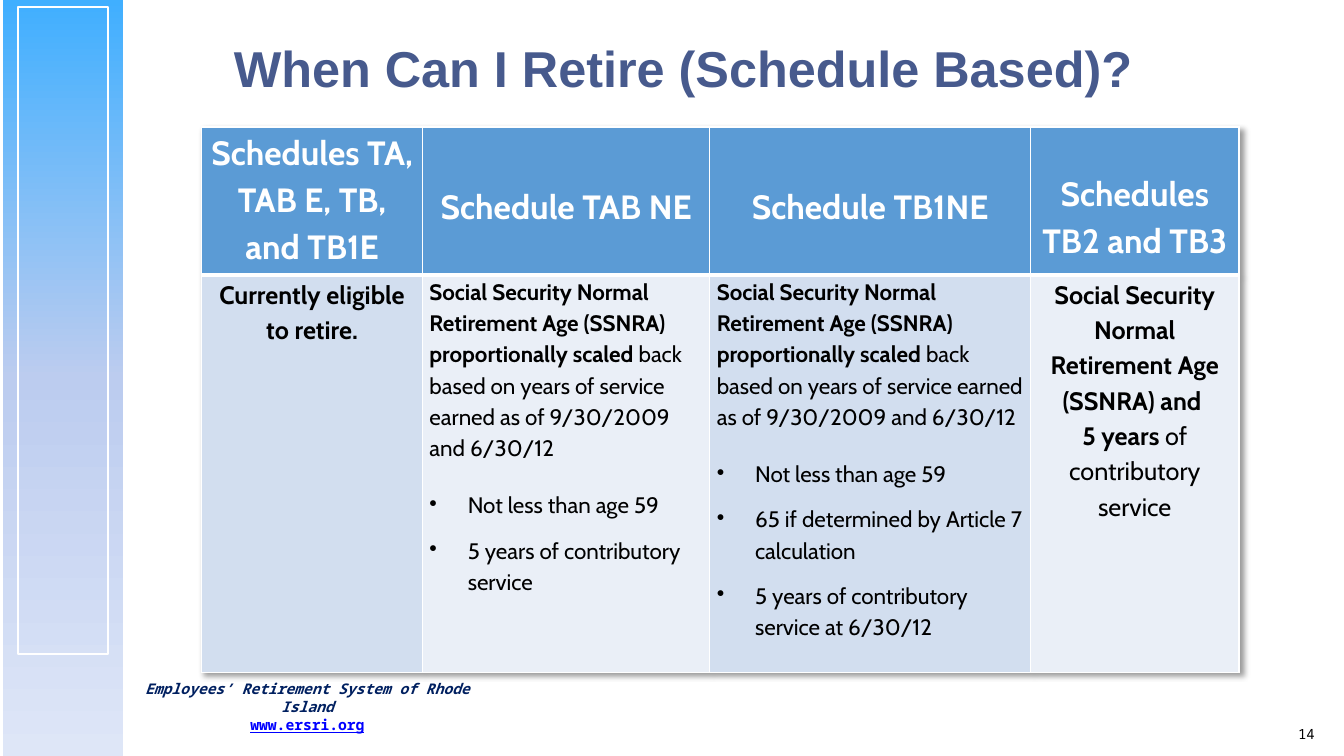
from dataclasses import dataclass, field

from pptx import Presentation
from pptx.dml.color import RGBColor as Rgb
from pptx.enum.shapes import MSO_SHAPE as Shape
from pptx.enum.text import MSO_ANCHOR as Anchor, PP_ALIGN as Align
from pptx.oxml import parse_xml as to_xml
from pptx.util import Emu, Pt

SCALE = 9144  # one px is a hundredth of an inch
NS = 'xmlns:a="http://schemas.openxmlformats.org/drawingml/2006/main"'
HUES = {
    "white": "FFFFFF", "black": "000000", "navy": "002060", "link": "0000FF",
    "title": "475A8D", "head": "5B9BD5", "dark": "D2DEEF", "pale": "EAEFF7",
    "sky": "40AFFF", "haze": "BCCCEF", "mist": "DEE6F7",
}


@dataclass
class Run:
    text: str
    hue: str = "black"
    style: dict = field(default_factory=dict)


@dataclass
class Para:
    runs: list[Run]
    align: Align = Align.LEFT
    lead: float = 1.0
    after: float = 0
    bullet: bool = False


@dataclass
class Box:
    place: tuple[int, int, int, int]
    paras: list[Para]
    anchor: Anchor = Anchor.TOP


@dataclass
class Cell:
    paras: list[Para]
    fill: str
    top: int = 0


def px(size: int) -> Emu:
    return Emu(size * SCALE)


def rgb(hue: str) -> Rgb:
    return Rgb.from_string(HUES[hue])


def write(frame, paras: list[Para]) -> None:
    for i, item in enumerate(paras):
        para = frame.paragraphs[0] if i == 0 else frame.add_paragraph()
        if item.bullet:
            props = para._p.get_or_add_pPr()
            props.set("marL", str(px(38)))
            props.set("indent", str(px(-38)))
            props.append(to_xml(f'<a:buChar {NS} char="•"/>'))
        para.alignment = item.align
        para.line_spacing = item.lead
        para.space_after = Pt(item.after)
        for part in item.runs:
            run = para.add_run()
            run.text = part.text
            run.font.color.rgb = rgb(part.hue)
            for name, value in part.style.items():
                setattr(run.font, name, value)


def draw_box(slide, box: Box) -> None:
    frame = slide.shapes.add_textbox(*map(px, box.place)).text_frame
    frame.word_wrap = True
    frame.vertical_anchor = box.anchor
    write(frame, box.paras)


def draw_bar(slide, place: tuple[int, int, int, int]):
    bar = slide.shapes.add_shape(Shape.RECTANGLE, *map(px, place))
    bar.shadow.inherit = False
    return bar


def draw_cell(cell, data: Cell, row: int) -> None:
    cell.margin_left = cell.margin_right = px(7)
    cell.margin_top, cell.margin_bottom = px(data.top), 0
    cell.fill.solid()
    cell.fill.fore_color.rgb = rgb(data.fill)
    write(cell.text_frame, data.paras)
    # The rule between the two rows is thick
    thick = "B" if row == 0 else "T"
    props = cell._tc.get_or_add_tcPr()
    for i, side in enumerate("LRTB"):
        width = Pt(3 if side == thick else 1)
        props.insert(i, to_xml(
            f'<a:ln{side} {NS} w="{width}"><a:solidFill>'
            f'<a:srgbClr val="{HUES["white"]}"/></a:solidFill></a:ln{side}>'))


# Text styles
CABIN = {"name": "Cabin"}
HEAD = CABIN | {"size": Pt(24), "bold": True}
BODY = CABIN | {"size": Pt(16)}
LARGE = CABIN | {"size": Pt(18)}
BOLD = {"bold": True}
MONO = {"name": "Noto Sans Mono", "size": Pt(10.5), "bold": True}


def head(text: str, top: int = 0) -> Cell:
    return Cell([Para([Run(text, "white", HEAD)], Align.CENTER, 1.15)], "head", top)


def mid(*runs: Run) -> Para:
    return Para(list(runs), Align.CENTER, 1.15)


def scaled(fill: str, *points: str) -> Cell:
    intro = Para([
        Run("Social Security Normal Retirement Age (SSNRA) proportionally scaled ",
            style=BODY | BOLD),
        Run("back based on years of service earned as of 9/30/2009 and 6/30/12",
            style=BODY)], lead=1.15, after=19)
    return Cell([intro] + [Para([Run(text, style=BODY)], lead=1.15, after=10, bullet=True)
                           for text in points], fill)


# Content
COLS = (219, 285, 318, 207)
ROWS = (147, 394)
CELLS = [
    [head("Schedules TA, TAB E, TB, and TB1E"), head("Schedule TAB NE", 54),
     head("Schedule TB1NE", 54), head("Schedules TB2 and TB3", 41)],
    [Cell([mid(Run("Currently eligible to retire.", style=LARGE | BOLD))], "dark"),
     scaled("pale", "Not less than age 59", "5 years of contributory service"),
     scaled("dark", "Not less than age 59", "65 if determined by Article 7 calculation",
            "5 years of contributory service at 6/30/12"),
     Cell([mid(Run("Social Security Normal Retirement Age (SSNRA) and ",
                   style=LARGE | BOLD)),
           mid(Run("5 years ", style=LARGE | BOLD),
               Run("of contributory service", style=LARGE))], "pale")],
]
BOXES = [
    Box((133, 670, 344, 63), [
        Para([Run("Employees’ Retirement System of Rhode Island", "navy",
                  MONO | {"italic": True})], Align.CENTER),
        Para([Run("www.ersri.org", "link", MONO | {"underline": True})], Align.CENTER)]),
    Box((1261, 701, 53, 40), [
        Para([Run("14", style=MONO | {"size": Pt(10), "bold": False})], Align.RIGHT)],
        Anchor.BOTTOM),
    Box((222, 0, 1092, 134), [
        Para([Run("When Can I Retire (Schedule Based)?", "title",
                  {"name": "Arial", "size": Pt(36), "bold": True})])], Anchor.MIDDLE),
]


def draw_side(slide) -> None:
    band = draw_bar(slide, (3, 0, 119, 750))
    stops = "".join(
        f'<a:gs pos="{pos}"><a:srgbClr val="{HUES[hue]}"/></a:gs>'
        for pos, hue in ((0, "sky"), (50000, "haze"), (100000, "mist")))
    band._element.spPr.insert(2, to_xml(
        f'<a:gradFill {NS} rotWithShape="1"><a:gsLst>{stops}</a:gsLst>'
        '<a:lin ang="5400000" scaled="0"/></a:gradFill>'))
    band.line.fill.background()
    rim = draw_bar(slide, (18, 7, 89, 642))
    rim.fill.background()
    rim.line.color.rgb = rgb("white")
    rim.line.width = Pt(1.75)


def draw_table(slide) -> None:
    place = (200, 126, sum(COLS), sum(ROWS))
    table = slide.shapes.add_table(len(ROWS), len(COLS), *map(px, place)).table
    table.first_row = table.horz_banding = False
    table._tbl.tblPr.insert(0, to_xml(
        f'<a:effectLst {NS}><a:outerShdw blurRad="50800" dist="38100" dir="2700000" '
        f'algn="tl" rotWithShape="0"><a:srgbClr val="{HUES["black"]}">'
        '<a:alpha val="40000"/></a:srgbClr></a:outerShdw></a:effectLst>'))
    for col, width in zip(table.columns, COLS):
        col.width = px(width)
    for r, height in enumerate(ROWS):
        table.rows[r].height = px(height)
        for c, data in enumerate(CELLS[r]):
            draw_cell(table.cell(r, c), data, r)


def main() -> None:
    deck = Presentation()
    deck.slide_width, deck.slide_height = px(1333), px(750)
    slide = deck.slides.add_slide(deck.slide_layouts[6])
    draw_side(slide)
    for box in BOXES:
        draw_box(slide, box)
    draw_table(slide)
    deck.save("out.pptx")


if __name__ == "__main__":
    main()
